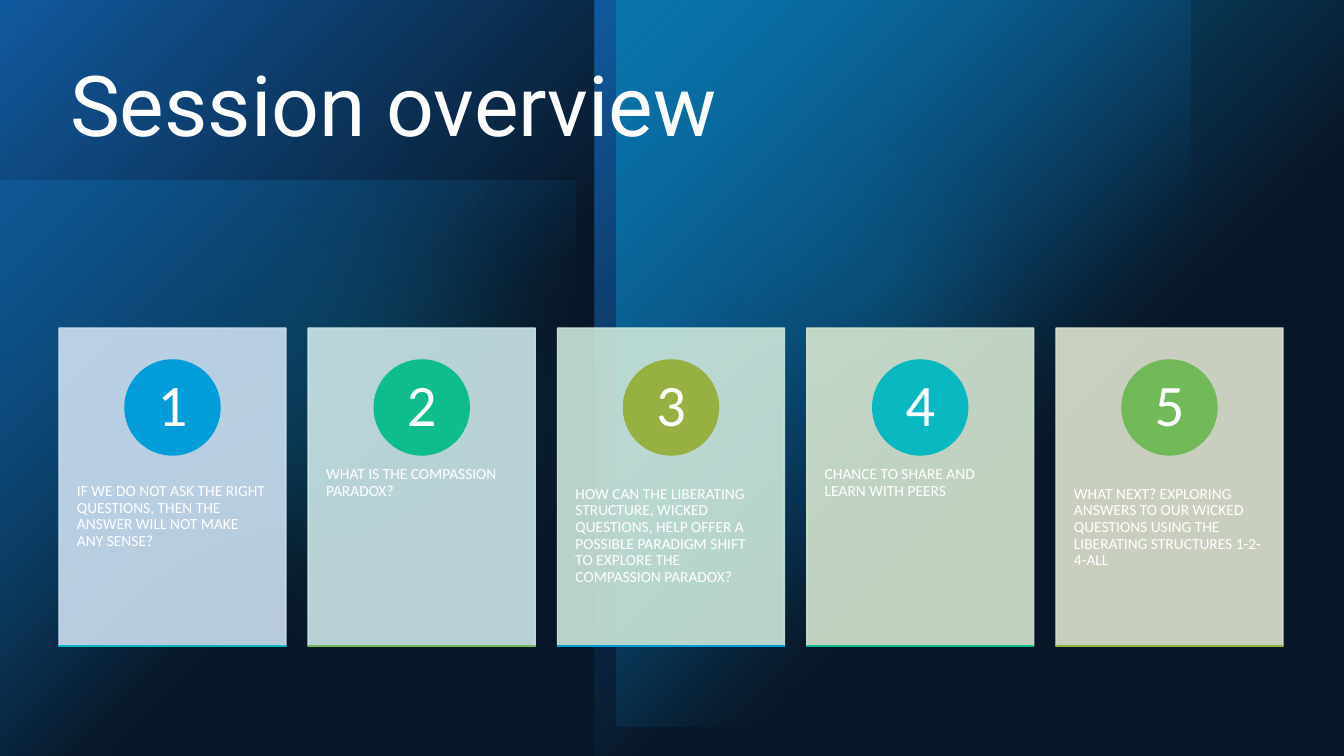
from lxml import etree
from pptx import Presentation
from pptx.dml.color import RGBColor
from pptx.enum.shapes import MSO_SHAPE
from pptx.enum.text import MSO_ANCHOR, PP_ALIGN
from pptx.oxml import parse_xml
from pptx.oxml.ns import qn
from pptx.util import Emu, Pt

RECT, OVAL = MSO_SHAPE.RECTANGLE, MSO_SHAPE.OVAL
LEFT, CENTER = PP_ALIGN.LEFT, PP_ALIGN.CENTER
TOP, MIDDLE = MSO_ANCHOR.TOP, MSO_ANCHOR.MIDDLE
WHITE = "FFFFFF"
NS = "http://schemas.openxmlformats.org/drawingml/2006/main"

# Content
TITLE = "Session overview"
# (text, card colour, circle colour, base line colour)
TOPICS = [
    ("IF WE DO NOT ASK THE RIGHT QUESTIONS, THEN THE ANSWER WILL NOT MAKE ANY SENSE?",
     "CCDFF1", "009DD9", "09B8C0"),
    ("WHAT IS THE COMPASSION PARADOX?", "CCE6E8", "0EBC8C", "71B959"),
    ("HOW CAN THE LIBERATING STRUCTURE, WICKED QUESTIONS, HELP OFFER A POSSIBLE "
     "PARADIGM SHIFT TO EXPLORE THE COMPASSION PARADOX?",
     "CCE7DA", "96B042", "009DD9"),
    ("CHANCE TO SHARE AND LEARN WITH PEERS", "D5E6D1", "09B8C0", "0EBC8C"),
    ("WHAT NEXT? EXPLORING ANSWERS TO OUR WICKED QUESTIONS USING THE LIBERATING "
     "STRUCTURES 1-2-4-ALL", "DDE4CF", "71B959", "96B042"),
]
# Backdrop: (box, colour, opacity in percent)
CORNER_GLOW = ((0, 181, 576, 576), "009DD9", 60)
SOFT_DISCS = [((634, 43, 476, 476), "09B8C0", 60), ((0, 56, 700, 700), "09B8C0", 20)]
PANELS = [
    ((0, 0, 595, 756), "0F6FC6", 100),
    ((595, 0, 596, 756), "0F6FC6", 100),
    ((617, 0, 727, 727), "009DD9", 100),
]
VEIL = ((0, 0, 1344, 756), "153A63", 40)

# Layout in px
SLIDE_W, SLIDE_H = 1344, 756
SOFT_EDGE = 140
TITLE_BOX = (60, 59, 1221, 200)
CARD_TOP, CARD_W, CARD_H = 328, 227, 318
FIRST_LEFT, LAST_LEFT = 59, 1056
CIRCLE_TOP, CIRCLE_D = 360, 95
BODY_TOP, BODY_H = 450, 190


def px(value):
    return Emu(round(value * 914400 / 100.8))


def rgb(color):
    return RGBColor.from_string(color)


def add_alpha(fill_parent, opacity):
    for color in fill_parent.findall(f"{qn('a:solidFill')}/{qn('a:srgbClr')}"):
        etree.SubElement(color, qn("a:alpha"), val=str(opacity * 1000))


def add_block(kind, box, color, opacity=100, outlined=False):
    block = slide.shapes.add_shape(kind, *map(px, box))
    block.shadow.inherit = False
    block.fill.solid()
    block.fill.fore_color.rgb = rgb(color)
    if outlined:
        block.line.color.rgb = rgb(color)
        block.line.width = Pt(1)
    else:
        block.line.fill.background()
    if opacity < 100:
        props = block._element.spPr
        add_alpha(props, opacity)
        add_alpha(props.find(qn("a:ln")), opacity)
    return block


def add_glow(box, color, opacity):
    """Rectangle fading out from its top left corner."""
    props = add_block(RECT, box, color)._element.spPr
    stops = "".join(
        f'<a:gs pos="{pos}"><a:srgbClr val="{color}"><a:alpha val="{alpha * 1000}"/>'
        "</a:srgbClr></a:gs>" for pos, alpha in ((0, opacity), (60000, 0)))
    gradient = parse_xml(
        f'<a:gradFill xmlns:a="{NS}" rotWithShape="1"><a:gsLst>{stops}</a:gsLst>'
        '<a:path path="circle"><a:fillToRect r="100000" b="100000"/></a:path></a:gradFill>')
    props.replace(props.find(qn("a:solidFill")), gradient)


def set_text(shape, text, size, font, insets, align=LEFT, anchor=TOP):
    frame = shape.text_frame
    across, down = map(px, insets)
    frame_format = {
        "word_wrap": True, "vertical_anchor": anchor,
        "margin_left": across, "margin_right": across,
        "margin_top": down, "margin_bottom": down,
    }
    for name, value in frame_format.items():
        setattr(frame, name, value)
    paragraph = frame.paragraphs[0]
    paragraph.text = text
    paragraph.alignment = align
    paragraph.line_spacing = 0.9
    for name, value in {"name": font, "size": Pt(size)}.items():
        setattr(paragraph.font, name, value)
    paragraph.font.color.rgb = rgb(WHITE)


prs = Presentation()
prs.slide_width, prs.slide_height = px(SLIDE_W), px(SLIDE_H)
slide = prs.slides.add_slide(prs.slide_layouts[6])

# Backdrop
slide.background.fill.solid()
slide.background.fill.fore_color.rgb = rgb("000000")
add_glow(*CORNER_GLOW)
for box, color, opacity in SOFT_DISCS:
    disc = add_block(OVAL, box, color, opacity)
    effects = disc._element.spPr.find(qn("a:effectLst"))
    etree.SubElement(effects, qn("a:softEdge"), rad=str(px(SOFT_EDGE)))
for panel in PANELS:
    add_glow(*panel)
add_block(RECT, *VEIL)

# Title
title = slide.shapes.add_textbox(*map(px, TITLE_BOX))
set_text(title, TITLE, 60, "Roboto", (10, 5))

# Topic cards
step = (LAST_LEFT - FIRST_LEFT) / (len(TOPICS) - 1)
for index, (topic, card_color, circle_color, base_color) in enumerate(TOPICS):
    left = FIRST_LEFT + index * step
    add_block(RECT, (left, CARD_TOP, CARD_W, CARD_H), card_color, 90, outlined=True)

    body = slide.shapes.add_textbox(*map(px, (left, BODY_TOP, CARD_W, BODY_H)))
    set_text(body, topic, 11, "Calibri", (18, 36))

    circle_left = left + (CARD_W - CIRCLE_D) / 2
    circle = add_block(OVAL, (circle_left, CIRCLE_TOP, CIRCLE_D, CIRCLE_D),
                       circle_color, outlined=True)
    set_text(circle, str(index + 1), 42, "Calibri", (0, 0), CENTER, MIDDLE)

    add_block(RECT, (left, CARD_TOP + CARD_H, CARD_W, 0), base_color, outlined=True)

prs.save("out.pptx")
